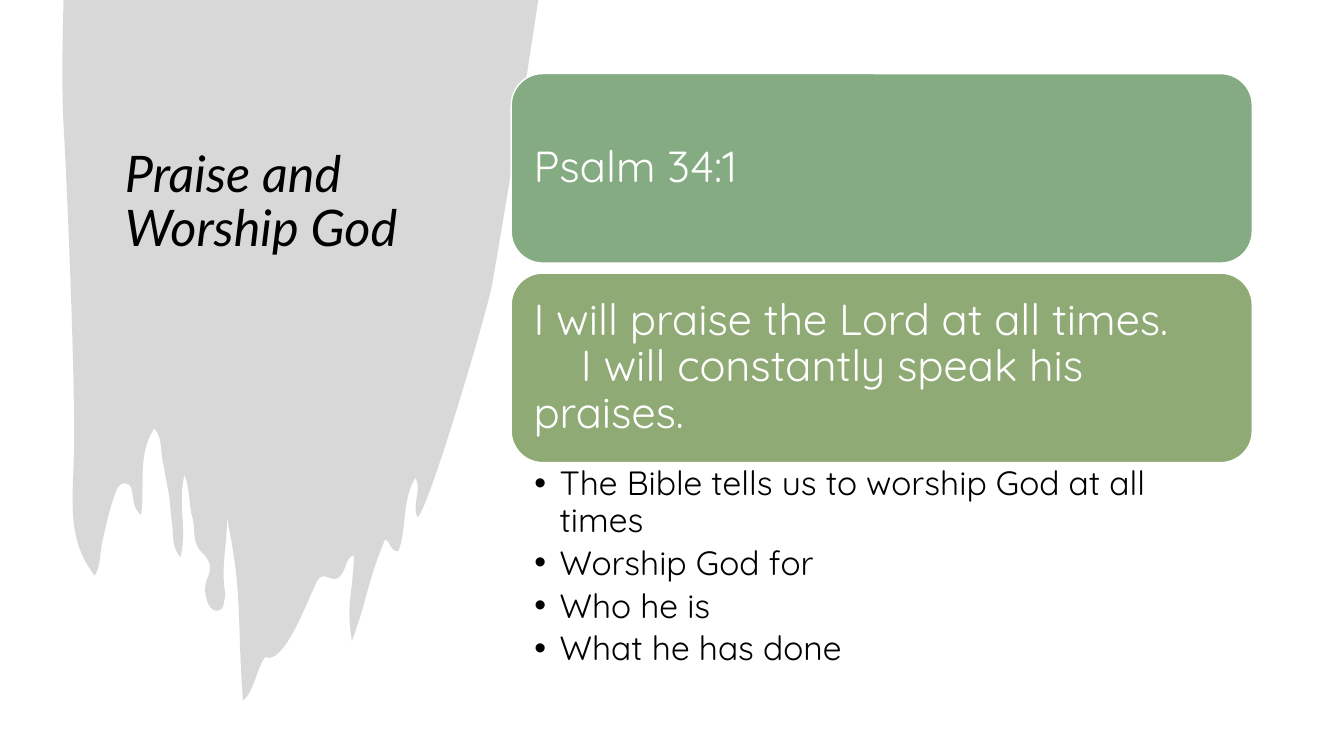
"""Builds the slide "Praise and Worship God" with a brush stroke, two verse cards and a bullet list."""
from lxml import etree
from pptx import Presentation
from pptx import util as u
from pptx.dml.color import RGBColor
from pptx.enum import shapes, text
from pptx.oxml.ns import qn

Inches, Pt = u.Inches, u.Pt


def color(hex_string):
    return RGBColor.from_string(hex_string)


def add_words(paragraph, words, size, font, ink, after=0, italic=None):
    paragraph.alignment = text.PP_ALIGN.LEFT
    paragraph.line_spacing = 0.9
    paragraph.space_after = Pt(after)
    run = paragraph.add_run()
    run.text = words
    run.font.size = Pt(size)
    run.font.name = font
    run.font.italic = italic
    run.font.color.rgb = color(ink)


deck = Presentation()
deck.slide_width, deck.slide_height = Inches(13.33), Inches(7.5)
slide = deck.slides.add_slide(deck.slide_layouts[6])

backdrop = slide.shapes.add_shape(shapes.MSO_SHAPE.RECTANGLE, 0, 0,
                                  deck.slide_width, deck.slide_height)
backdrop.shadow.inherit = False
backdrop.fill.solid()
backdrop.fill.fore_color.rgb = color("FFFFFF")
backdrop.line.fill.background()

stroke_curves = [
    (5.22, 0.81, 4.98, 2.26, 4.88, 2.83), (4.81, 3.17, 4.24, 5.09, 4.14, 5.13),
    (4.08, 5, 4.19, 4.87, 4.12, 4.74), (3.98, 4.97, 4.04, 5.25, 3.95, 5.47),
    (3.86, 5.47, 3.88, 5.37, 3.82, 5.35), (3.64, 5.78, 3.65, 5.93, 3.49, 6.36),
    (3.43, 5.97, 3.5, 5.91, 3.51, 5.51), (3.43, 5.54, 3.44, 5.61, 3.41, 5.66),
    (3.38, 5.72, 3.35, 5.77, 3.26, 5.73), (3.17, 5.69, 3.15, 5.75, 3.12, 5.82),
    (3.03, 6.01, 2.81, 6.6, 2.63, 6.52), (2.55, 6.61, 2.53, 6.85, 2.41, 6.95),
    (2.35, 6.16, 2.41, 5.9, 2.25, 5.13), (2.26, 5.37, 2.19, 5.61, 2.23, 5.86),
    (2.24, 5.9, 2.23, 5.94, 2.22, 5.98), (2.22, 6.02, 2.2, 6.06, 2.15, 6.06),
    (2.11, 6.06, 2.09, 6.03, 2.07, 6), (2.03, 5.91, 2.02, 5.82, 2.06, 5.73),
    (2.1, 5.64, 2.09, 5.56, 2.01, 5.49), (1.9, 5.39, 1.94, 5.25, 1.91, 5.14),
    (1.87, 5.01, 1.89, 4.87, 1.83, 4.71), (1.76, 4.99, 1.86, 5.25, 1.79, 5.53),
    (1.7, 5.42, 1.72, 5.31, 1.71, 5.22), (1.69, 5.1, 1.69, 4.98, 1.67, 4.87),
    (1.65, 4.77, 1.63, 4.66, 1.61, 4.55), (1.59, 4.45, 1.61, 4.34, 1.53, 4.25),
    (1.36, 4.51, 1.44, 4.81, 1.4, 5.11), (1.31, 5.03, 1.33, 4.95, 1.31, 4.88),
    (1.3, 4.84, 1.3, 4.81, 1.26, 4.8), (1.21, 4.78, 1.18, 4.82, 1.16, 4.85),
    (1.09, 5.03, 1.05, 5.21, 1.01, 5.4), (0.99, 5.5, 1, 5.61, 0.94, 5.71),
    (0.67, 5.37, 0.72, 4.99, 0.73, 4.61), (0.76, 4, 0.66, 1.74, 0.63, 1.23),
    (0.61, 0.82, 0.62, 0.41, 0.63, 0),
]
builder = slide.shapes.build_freeform(Inches(5.34), Inches(-0.01))
builder.add_line_segments([(Inches(curve[4]), Inches(curve[5])) for curve in stroke_curves],
                          close=True)
brush_stroke = builder.convert_to_shape()
brush_stroke.shadow.inherit = False
brush_stroke.line.fill.background()
brush_stroke.fill.solid()
brush_stroke.fill.fore_color.rgb = color("404040")
stroke_properties = brush_stroke._element.spPr
etree.SubElement(stroke_properties.find(qn("a:solidFill"))[0], qn("a:alpha"), val="20000")
for segment, curve in zip(list(stroke_properties.iter(qn("a:lnTo"))), stroke_curves):
    bezier = etree.Element(qn("a:cubicBezTo"))
    for x, y in zip(curve[::2], curve[1::2]):
        etree.SubElement(bezier, qn("a:pt"), x=str(Inches(x) - brush_stroke.left),
                         y=str(Inches(y) - brush_stroke.top))
    segment.getparent().replace(segment, bezier)

title = slide.shapes.add_textbox(Inches(1.14), Inches(0.6), Inches(3.41), Inches(2.83)).text_frame
title.word_wrap = True
title.vertical_anchor = text.MSO_ANCHOR.MIDDLE
add_words(title.paragraphs[0], "Praise and Worship God", 36, "Lato", "000000", italic=True)

left, width, card_height = Inches(5.07), Inches(7.35), Inches(1.88)
verse_cards = [
    ("85AB82", ["Psalm 34:1"]),
    ("8FAA74", ["I will praise the Lord at all times.", "\tI will constantly speak his praises."]),
]
for row, (card_color, verse_lines) in enumerate(verse_cards):
    card = slide.shapes.add_shape(shapes.MSO_SHAPE.ROUNDED_RECTANGLE,
                                  left, Inches(0.73 + 1.98 * row), width, card_height)
    card.shadow.inherit = False
    card.fill.solid()
    card.fill.fore_color.rgb = color(card_color)
    card.line.color.rgb = color("FFFFFF")
    card.line.width = Pt(1)
    verse = card.text_frame
    verse.word_wrap = True
    verse.vertical_anchor = text.MSO_ANCHOR.MIDDLE
    verse.margin_left = verse.margin_right = verse.margin_top = verse.margin_bottom = Inches(0.13)
    paragraph = verse.paragraphs[0]
    for number, words in enumerate(verse_lines):
        if number:
            paragraph.add_line_break()
        add_words(paragraph, words, 31, "Quicksand", "FFFFFF")
    tab_stops = etree.SubElement(paragraph._p.get_or_add_pPr(), qn("a:tabLst"))
    etree.SubElement(tab_stops, qn("a:tab"), pos=str(Inches(0.47)), algn="l")

points = slide.shapes.add_textbox(left, Inches(4.59), width, Inches(2.18)).text_frame
points.word_wrap = True
points.margin_left, points.margin_right = Inches(0.23), Inches(0.24)
points.margin_top = points.margin_bottom = Inches(0.04)
for number, words in enumerate(("The Bible tells us to worship God at all times",
                                "Worship God for", "Who he is", "What he has done")):
    paragraph = points.add_paragraph() if number else points.paragraphs[0]
    add_words(paragraph, words, 24, "Quicksand", "000000", after=4.8)
    paragraph.level = 1
    properties = paragraph._p.get_or_add_pPr()
    properties.set("marL", str(Inches(0.25)))
    properties.set("indent", str(Inches(-0.25)))
    etree.SubElement(properties, qn("a:buFont"), typeface="Arial")
    etree.SubElement(properties, qn("a:buChar"), char="•")

deck.save("out.pptx")
